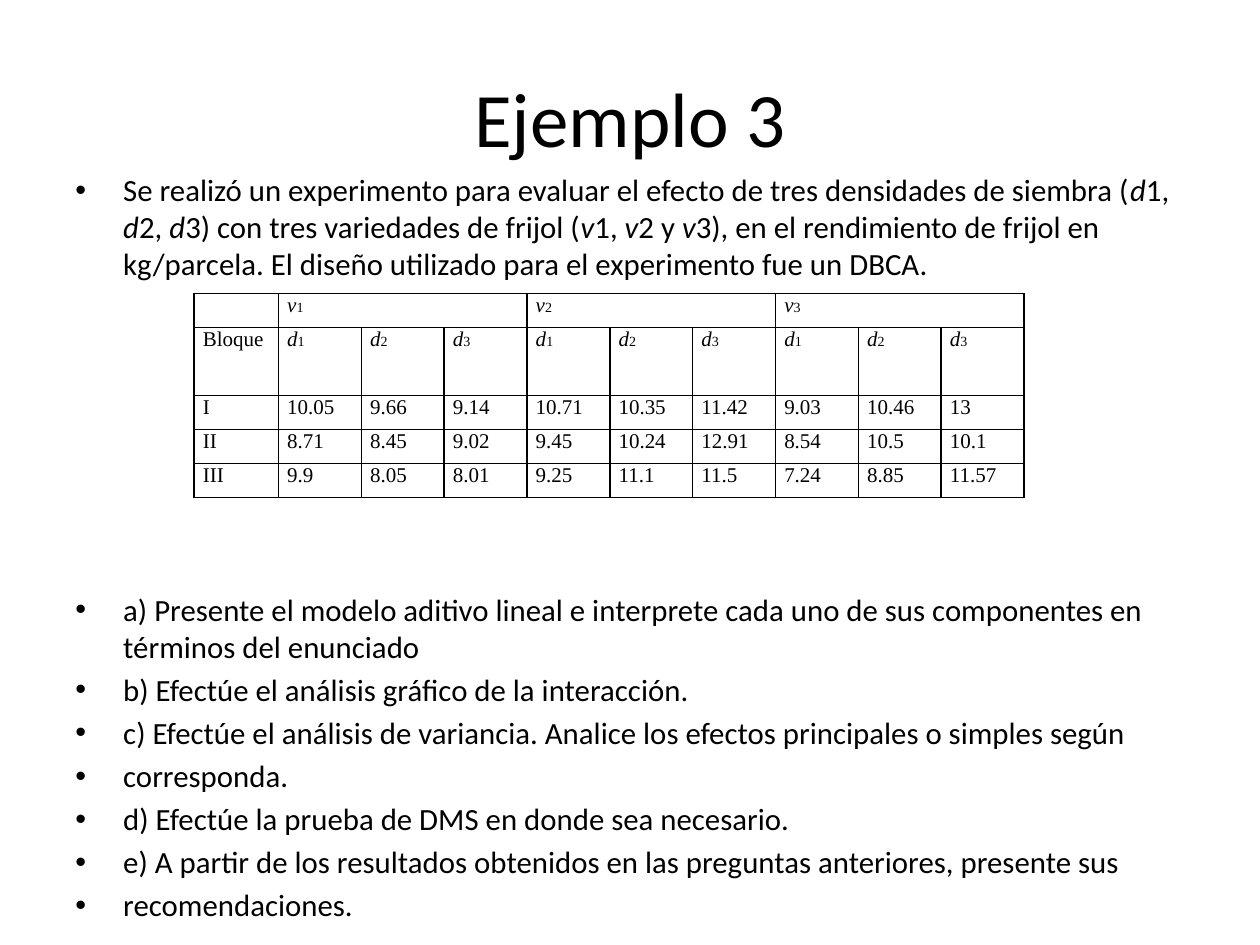
from pptx import Presentation, util as u
from pptx.dml.color import RGBColor
from pptx.enum import text
from pptx.oxml.ns import qn
from lxml import etree


def color(value):
    return RGBColor.from_string(value)


class Slide:
    ink = "000000"
    sans = "Calibri"
    serif = "Times New Roman"
    body_size = 17.6
    cell_size = 12

    def __init__(self, prs):
        self.s = prs.slides.add_slide(prs.slide_layouts[6])

    def runs(self, p, parts, size, font):
        """Each part is (text, italic) or (text, italic, own size)."""
        for words, italic, *own in parts:
            r = p.add_run()
            r.text = words
            r.font.name = font
            r.font.size = u.Pt(own[0] if own else size)
            r.font.italic = italic
            r.font.color.rgb = color(self.ink)

    def box(self, x, y, w, h):
        tf = self.s.shapes.add_textbox(*map(u.Inches, (x, y, w, h))).text_frame
        tf.word_wrap = True
        return tf

    def title(self, words, *area):
        tf = self.box(*area)
        tf.vertical_anchor = text.MSO_ANCHOR.MIDDLE
        p = tf.paragraphs[0]
        p.alignment = text.PP_ALIGN.CENTER
        self.runs(p, [(words, False)], 44, self.sans)

    def bullets(self, items, *area):
        tf = self.box(*area)
        for i, parts in enumerate(items):
            p = tf.add_paragraph() if i else tf.paragraphs[0]
            p.space_before = u.Pt(3.5 if i else 0)
            pPr = p._p.get_or_add_pPr()
            pPr.set("marL", str(u.Inches(0.38)))
            pPr.set("indent", str(u.Inches(-0.38)))
            etree.SubElement(pPr, qn("a:buFont"), typeface="Arial")
            etree.SubElement(pPr, qn("a:buChar"), char="•")
            self.runs(p, parts, self.body_size, self.sans)

    def borders(self, cell):
        tcPr = cell._tc.get_or_add_tcPr()
        for i, side in enumerate(("a:lnL", "a:lnR", "a:lnT", "a:lnB")):
            ln = etree.Element(qn(side), w=str(u.Pt(1)))
            fill = etree.SubElement(ln, qn("a:solidFill"))
            etree.SubElement(fill, qn("a:srgbClr"), val=self.ink)
            tcPr.insert(i, ln)

    def table(self, rows, spans, widths, heights, x, y):
        t = self.s.shapes.add_table(
            len(rows), len(widths), u.Inches(x), u.Inches(y),
            u.Inches(sum(widths)), u.Inches(sum(heights))).table
        t.first_row = t.horz_banding = False
        for col, w in zip(t.columns, widths):
            col.width = u.Inches(w)
        for row, h in zip(t.rows, heights):
            row.height = u.Inches(h)
        for i, row in enumerate(rows):
            for j, parts in enumerate(row):
                cell = t.cell(i, j)
                cell.margin_left = cell.margin_right = u.Inches(0.07)
                cell.margin_top = cell.margin_bottom = 0
                cell.fill.background()
                self.borders(cell)
                p = cell.text_frame.paragraphs[0]
                self.runs(p, parts, self.cell_size, self.serif)
                if not parts:  # keeps an empty cell from stretching its row
                    etree.SubElement(p._p, qn("a:endParaRPr"),
                                     sz=str(self.cell_size * 100))
        for first, last in spans:
            t.cell(0, first).merge(t.cell(0, last))


def level(letter, number):
    return [(letter, True), (str(number), False, 8)]


def plain(words):
    return [(words, False)]


def main():
    prs = Presentation()
    prs.slide_width, prs.slide_height = u.Inches(10), u.Inches(7.5)
    slide = Slide(prs)

    # Title
    slide.title("Ejemplo 3", 0.5, 0.3, 9, 1.25)

    # Statement: every other part is italic
    statement = [
        "Se realizó un experimento para evaluar el efecto de tres densidades "
        "de siembra (", "d", "1, ", "d", "2, ", "d",
        "3) con tres variedades de frijol (", "v", "1, ", "v", "2 y ", "v",
        "3), en el rendimiento de frijol en kg/parcela. El diseño utilizado "
        "para el experimento fue un DBCA."]
    slide.bullets([[(words, i % 2 == 1) for i, words in enumerate(statement)]],
                  0.5, 1.31, 9, 1)

    # Yield by block, variety and density
    blocks = [
        ("I", "10.05", "9.66", "9.14", "10.71", "10.35", "11.42", "9.03", "10.46", "13"),
        ("II", "8.71", "8.45", "9.02", "9.45", "10.24", "12.91", "8.54", "10.5", "10.1"),
        ("III", "9.9", "8.05", "8.01", "9.25", "11.1", "11.5", "7.24", "8.85", "11.57"),
    ]
    varieties = [[]]
    for n in (1, 2, 3):
        varieties += [level("v", n), [], []]
    densities = [plain("Bloque")] + [level("d", n) for n in (1, 2, 3)] * 3
    rows = [varieties, densities] + [[plain(v) for v in b] for b in blocks]
    slide.table(rows, [(1, 3), (4, 6), (7, 9)],
                [0.67] + [(6.59 - 0.67) / 9] * 9,
                [0.27, 0.54] + [0.27] * 3, 1.54, 2.33)

    # Questions
    questions = [
        "a) Presente el modelo aditivo lineal e interprete cada uno de sus "
        "componentes en términos del enunciado",
        "b) Efectúe el análisis gráfico de la interacción.",
        "c) Efectúe el análisis de variancia. Analice los efectos principales "
        "o simples según",
        "corresponda.",
        "d) Efectúe la prueba de DMS en donde sea necesario.",
        "e) A partir de los resultados obtenidos en las preguntas anteriores, "
        "presente sus",
        "recomendaciones.",
    ]
    slide.bullets([plain(q) for q in questions], 0.5, 4.64, 9, 2.8)

    prs.save("out.pptx")


if __name__ == "__main__":
    main()
